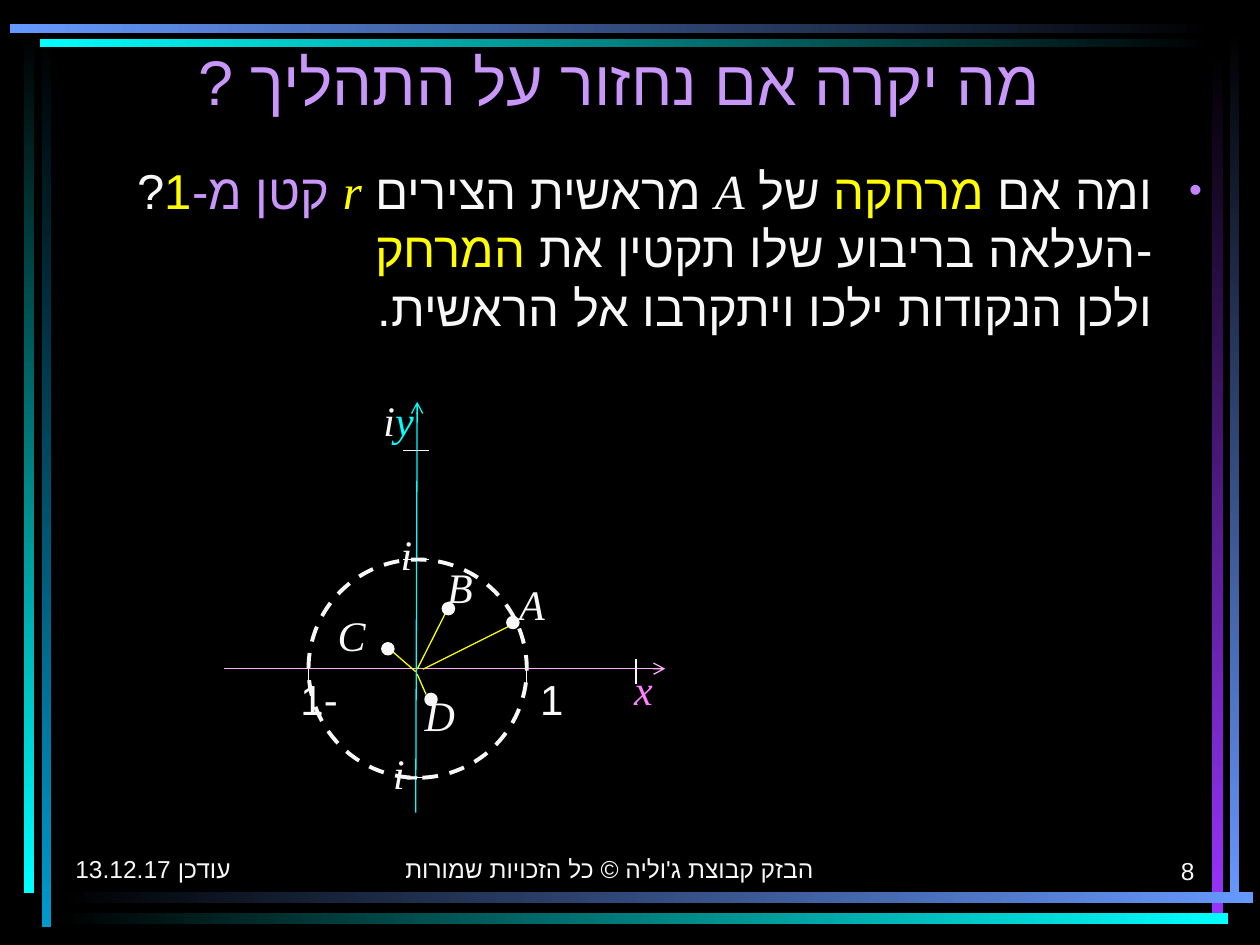
"""Build a Hebrew slide on repeated squaring of a complex number inside the unit circle."""
import pptx
import pptx.dml.color
import pptx.enum.dml
import pptx.enum.shapes
import pptx.enum.text
import pptx.oxml
import pptx.oxml.ns
import pptx.util

Cm, Pt = pptx.util.Cm, pptx.util.Pt
SHAPE = pptx.enum.shapes.MSO_SHAPE
ALIGN = pptx.enum.text.PP_ALIGN
ANCHOR = pptx.enum.text.MSO_ANCHOR
WHITE, YELLOW, LILAC, CYAN = "F8F8F8", "FFFF00", "C996FA", "00FFFF"
BLUE, TIMES, CABIN = "6699FF", "Times New Roman", "Cabin"


def paint(color, value):
    color.rgb = pptx.dml.color.RGBColor.from_string(value)


def write(place, size, align, paragraphs, anchor=ANCHOR.TOP):
    box = page.shapes.add_textbox(*[Cm(length) for length in place])
    frame = box.text_frame
    frame.word_wrap = True
    frame.vertical_anchor = anchor
    for index, spans in enumerate(paragraphs):
        para = frame.add_paragraph() if index else frame.paragraphs[0]
        para.alignment = align
        para._p.get_or_add_pPr().set("rtl", "1")
        for text, font, color, italic in spans:
            span = para.add_run()
            span.text = text
            span.font.size = Pt(size)
            span.font.name = font
            span.font.italic = italic
            paint(span.font.color, color)
            script = pptx.oxml.parse_xml(
                f'<a:cs {pptx.oxml.ns.nsdecls("a")} typeface="Arial"/>')
            span._r.get_or_add_rPr().append(script)
    return frame


deck = pptx.Presentation()
deck.slide_width, deck.slide_height = Cm(25.4), Cm(19.05)
page = deck.slides.add_slide(deck.slide_layouts[6])
page.background.fill.solid()
paint(page.background.fill.fore_color, "000000")

frame_bars = [
    ((0.84, 0.71, 0.2, 17.98), "000000", "0099CC", 270),
    ((0.48, 0.64, 0.2, 17.37), "000000", CYAN, 270),
    ((24.79, 0.61, 0.18, 17.6), "000000", BLUE, 270),
    ((24.43, 1.07, 0.22, 17.35), "000000", "9933FF", 270),
    ((1.14, 17.98, 24.13, 0.22), "000000", BLUE, 0),
    ((1.13, 18.41, 23.62, 0.22), "000000", CYAN, 0),
    ((0.81, 0.79, 23.67, 0.16), CYAN, "000000", 0),
    ((0.2, 0.48, 24.28, 0.18), BLUE, "000000", 0),
]
for place, start, end, angle in frame_bars:
    bar = page.shapes.add_shape(SHAPE.RECTANGLE, *[Cm(length) for length in place])
    bar.shadow.inherit = False
    bar.line.fill.background()
    bar.fill.gradient()
    bar.fill.gradient_angle = angle
    for stop, color in zip(bar.fill.gradient_stops, (start, end)):
        paint(stop.color, color)

write((1.55, 0.74, 22.23, 2.34), 36, ALIGN.CENTER,
      [[(" מה יקרה אם נחזור על התהליך ?", CABIN, LILAC, False)]])

body = write((1.09, 2.51, 23.39, 16), 28, ALIGN.RIGHT, [
    [("ומה אם ", CABIN, WHITE, False),
     ("מרחקה", CABIN, YELLOW, False),
     (" של ", CABIN, WHITE, False),
     ("A", TIMES, WHITE, True),
     (" מראשית הצירים ", CABIN, WHITE, False),
     ("r ", TIMES, YELLOW, True),
     ("קטן מ-", TIMES, LILAC, False),
     ("1", TIMES, YELLOW, False),
     ("? ", CABIN, WHITE, False)],
    [("-העלאה בריבוע שלו תקטין את ", CABIN, WHITE, False),
     ("המרחק ", CABIN, YELLOW, False)],
    [("ולכן הנקודות ילכו ויתקרבו אל הראשית.", CABIN, WHITE, False)],
])
for para in body.paragraphs:
    para._p.pPr.set("marL", str(Cm(1)))
    para._p.pPr.set("indent", "0")
question = body.paragraphs[0]
question.line_spacing = 1.5
question.space_before = Pt(6)
question._p.pPr.set("indent", str(-Cm(1)))
for bullet in ('buClr {}><a:srgbClr val="C285FF"/></a:buClr>',
               'buSzPct {} val="75000"/>',
               'buFont {} typeface="Arial"/>',
               'buChar {} char="•"/>'):
    question._p.pPr.append(
        pptx.oxml.parse_xml("<a:" + bullet.format(pptx.oxml.ns.nsdecls("a"))))

write((1.27, 16.92, 5.92, 1.02), 14, ALIGN.LEFT,
      [[("עודכן 13.12.17", CABIN, WHITE, False)]], ANCHOR.BOTTOM)
write((19.05, 16.71, 5.28, 1.27), 14, ALIGN.RIGHT,
      [[("8", CABIN, WHITE, False)]], ANCHOR.BOTTOM)
write((7.29, 16.66, 10, 1.27), 14, ALIGN.CENTER,
      [[("הבזק קבוצת ג'וליה © כל הזכויות שמורות", "Arial", WHITE, False)]],
      ANCHOR.BOTTOM)

origin_x, origin_y, unit = 8.42, 13.48, 2.2
lines = [
    ((4.52, origin_y, 13.41, origin_y), "FFAFFF", True),
    ((8.38, 16.38, 8.41, 8.1), CYAN, True),
    ((8.53, 13.49, 10.31, 12.6), YELLOW, False),
    ((8.41, 13.49, 8.99, 12.34), YELLOW, False),
    ((8.38, 13.54, 7.85, 13.08), YELLOW, False),
    ((8.41, 13.59, 8.59, 14), YELLOW, False),
]
for step in (-1, 1, 2):
    tick_x, tick_y = origin_x + step * unit, origin_y - step * unit
    lines.append(((tick_x, 13.28, tick_x, 13.78), WHITE, False))
    lines.append(((8.13, tick_y, 8.64, tick_y), WHITE, False))
for ends, color, arrow in lines:
    line = page.shapes.add_connector(
        pptx.enum.shapes.MSO_CONNECTOR.STRAIGHT, *[Cm(length) for length in ends])
    line.line.width = Pt(0.75)
    paint(line.line.color, color)
    if arrow:
        line.line._get_or_add_ln().append(pptx.oxml.parse_xml(
            f'<a:tailEnd {pptx.oxml.ns.nsdecls("a")} type="arrow"/>'))
    line._element.spPr.append(pptx.oxml.parse_xml(
        f'<a:effectLst {pptx.oxml.ns.nsdecls("a")}/>'))

circles = [(origin_x, origin_y, unit, 2.25), (9.04, 12.27, 0.1, 2),
           (10.34, 12.55, 0.1, 2), (7.82, 13.08, 0.1, 2), (8.69, 14.1, 0.1, 2)]
for x, y, radius, width in circles:
    circle = page.shapes.add_shape(
        SHAPE.OVAL, Cm(x - radius), Cm(y - radius), Cm(2 * radius), Cm(2 * radius))
    circle.shadow.inherit = False
    circle.line.width = Pt(width)
    paint(circle.line.color, WHITE)
    if radius == unit:
        circle.fill.background()
        circle.line.dash_style = pptx.enum.dml.MSO_LINE.DASH
    else:
        circle.fill.solid()
        paint(circle.fill.fore_color, WHITE)

for name, x, y in (("A", 10.62, 11.53), ("B", 9.17, 11.2),
                   ("C", 7.01, 12.17), ("D", 8.81, 13.77)):
    write((x, y, 0.61, 1.27), 24, ALIGN.CENTER, [[(name, TIMES, WHITE, True)]])

axis_labels = [
    (7.34, 10.52, 1.22, [("i", TIMES, WHITE, True)]),
    (7.47, 14.94, 1.22, [("-i", TIMES, WHITE, True)]),
    (10.16, 13.46, 1.45, [("1", TIMES, WHITE, False)]),
    (5.61, 13.46, 1.45, [("-1", TIMES, WHITE, False)]),
    (12.8, 13.26, 0.61, [("x", TIMES, "FF81FF", True)]),
    (7.37, 7.82, 1.22, [("i", TIMES, WHITE, True), ("y", TIMES, CYAN, True)]),
]
for x, y, width, spans in axis_labels:
    write((x, y, width, 1.27), 24, ALIGN.RIGHT, [spans])

deck.save("out.pptx")
